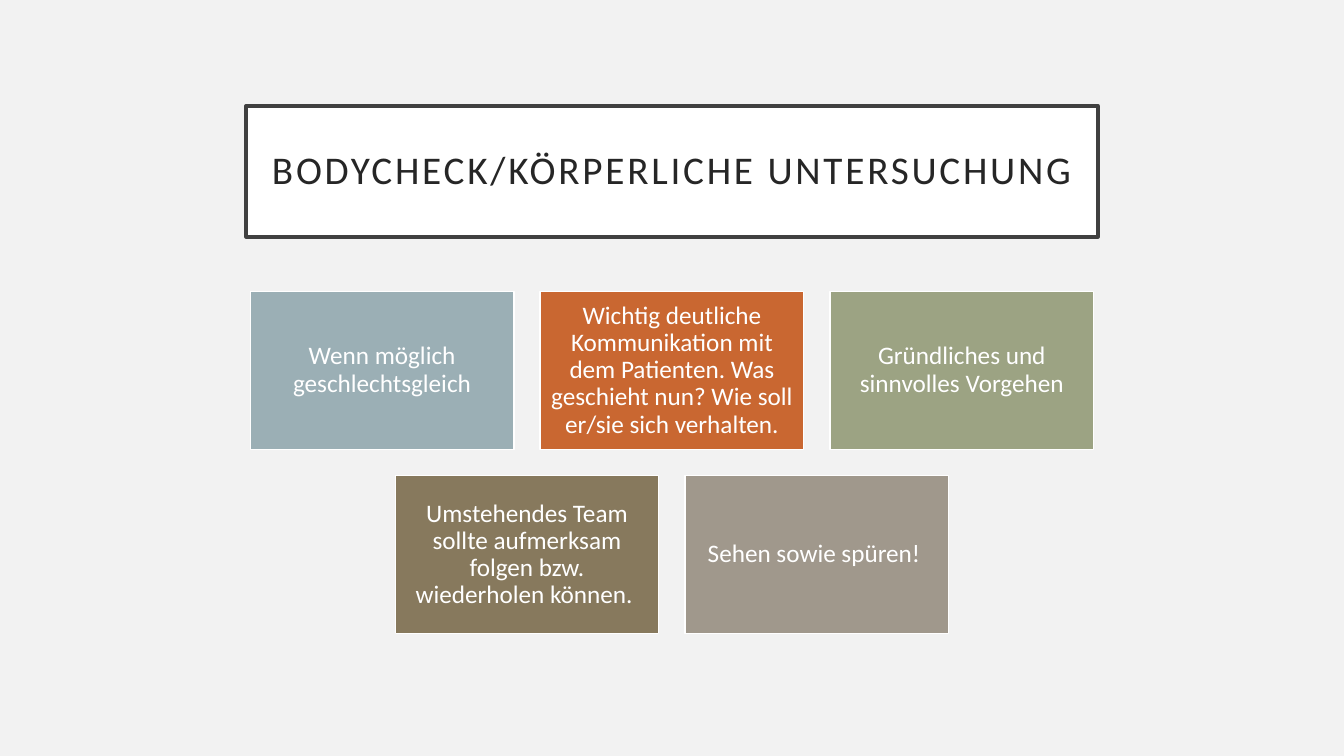
from pptx import Presentation
from pptx.dml.color import RGBColor
from pptx.enum.shapes import MSO_SHAPE
from pptx.enum.text import MSO_ANCHOR, PP_ALIGN
from pptx.util import Pt

RECT = MSO_SHAPE.RECTANGLE
MIDDLE = MSO_ANCHOR.MIDDLE
CENTER = PP_ALIGN.CENTER

FONT = "Calibri"
WHITE = "FFFFFF"
COLS = 3
GAP = 18.8
CARDS = [
    ("Wenn möglich geschlechtsgleich", "9BAFB5"),
    ("Wichtig deutliche Kommunikation mit dem Patienten. "
     "Was geschieht nun? Wie soll er/sie sich verhalten.", "C96731"),
    ("Gründliches und sinnvolles Vorgehen", "9CA383"),
    ("Umstehendes Team sollte aufmerksam folgen bzw. wiederholen können. ",
     "87795D"),
    ("Sehen sowie spüren! ", "A0988C"),
]


def color(code):
    return RGBColor.from_string(code)


def panel(slide, box, fill, edge, weight, inset, text, size, ink):
    shape = slide.shapes.add_shape(RECT, *[Pt(v) for v in box])
    shape.shadow.inherit = False
    shape.fill.solid()
    shape.fill.fore_color.rgb = color(fill)
    shape.line.color.rgb = color(edge)
    shape.line.width = Pt(weight)
    frame = shape.text_frame
    frame.word_wrap = True
    frame.vertical_anchor = MIDDLE
    frame.margin_left = frame.margin_right = Pt(inset)
    frame.margin_top = frame.margin_bottom = Pt(inset)
    para = frame.paragraphs[0]
    para.alignment = CENTER
    para.line_spacing = 0.9
    run = para.add_run()
    run.text = text
    run.font.name = FONT
    run.font.size = Pt(size)
    run.font.color.rgb = color(ink)
    return run


def title(slide, box):
    run = panel(slide, box, WHITE, "404040", 2.5, 14.4,
                "BODYCHECK/KÖRPERLICHE UNTERSUCHUNG", 28, "262626")
    run.font._element.set("spc", "200")


def cards(slide, box):
    left, top, width, height = box
    rows = [CARDS[i:i + COLS] for i in range(0, len(CARDS), COLS)]
    wide = (width - GAP * (COLS - 1)) / COLS
    high = (height - GAP * (len(rows) - 1)) / len(rows)
    for r, row in enumerate(rows):
        start = left + (COLS - len(row)) * (wide + GAP) / 2
        y = top + r * (high + GAP)
        for c, (text, fill) in enumerate(row):
            x = start + c * (wide + GAP)
            panel(slide, (x, y, wide, high), fill, WHITE, 1, 5.4,
                  text, 18, WHITE)


def main():
    deck = Presentation()
    deck.slide_width = Pt(960)
    deck.slide_height = Pt(540)
    slide = deck.slides.add_slide(deck.slide_layouts[6])
    slide.background.fill.solid()
    slide.background.fill.fore_color.rgb = color("F2F2F2")
    title(slide, (175.8, 75.6, 608.4, 93.6))
    cards(slide, (178.8, 208.1, 602.4, 244.6))
    deck.save("out.pptx")


if __name__ == "__main__":
    main()
